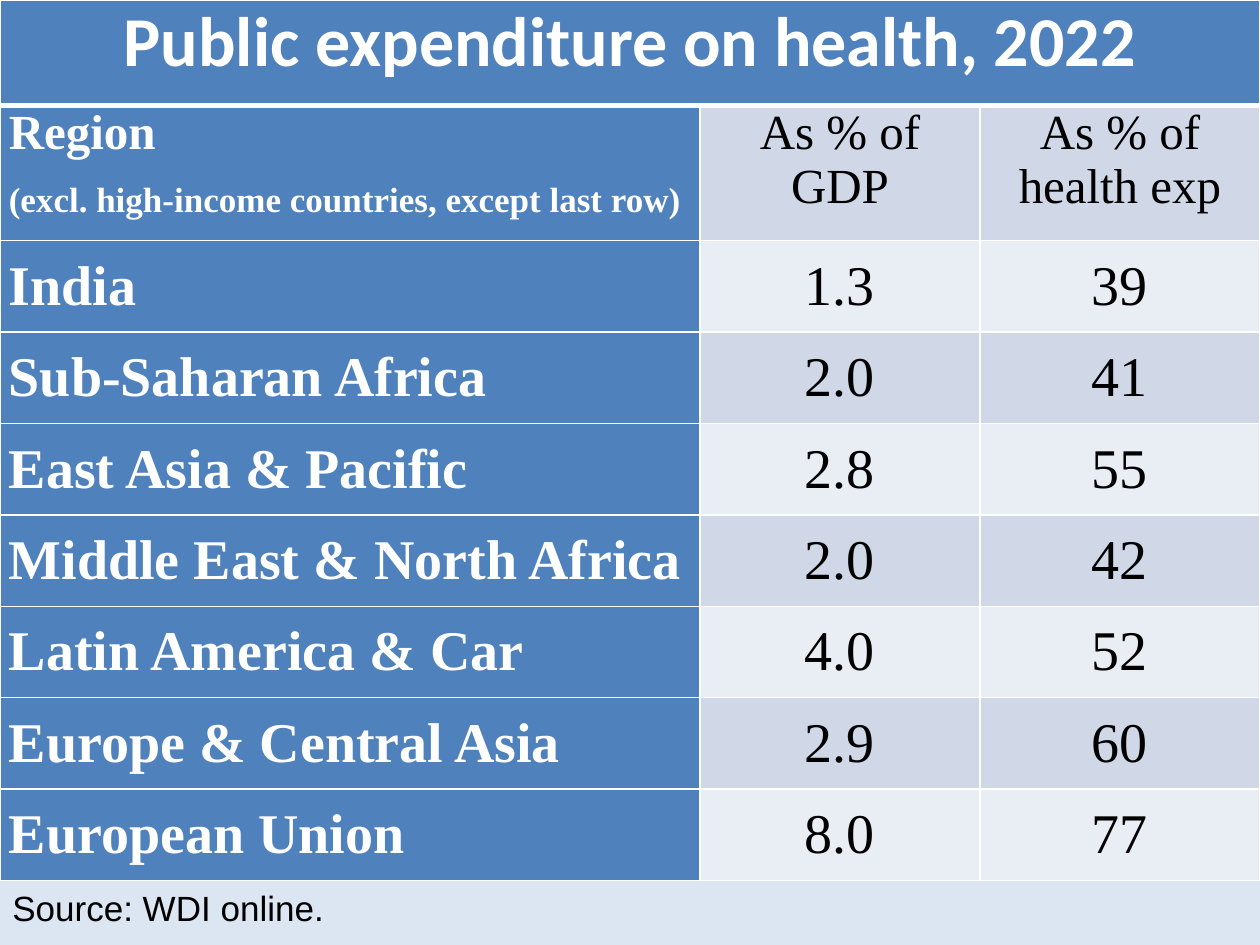
from lxml import etree
from pptx import Presentation
from pptx.dml.color import RGBColor
from pptx.enum.text import MSO_ANCHOR, PP_ALIGN
from pptx.oxml.ns import qn
from pptx.util import Inches, Pt

LEFT, CENTER = PP_ALIGN.LEFT, PP_ALIGN.CENTER
TOP, MIDDLE = MSO_ANCHOR.TOP, MSO_ANCHOR.MIDDLE

WIDTH, HEIGHT = 10, 7.5
TABLE_HEIGHT, TITLE_HEIGHT, HEADER_HEIGHT = 6.99, 0.84, 1.07
COLUMN_SHARES = (5 / 9, 2 / 9, 2 / 9)
SERIF = "Times New Roman"
BLUE, WHITE, BLACK = "4F81BD", "FFFFFF", "000000"
BACKGROUND = "DCE6F2"
BANDS = ("D0D8E8", "E9EDF4")

TITLE = "Public expenditure on health, 2022"
REGION_HEADING = (("Region", 28), ("(excl. high-income countries, except last row)", 20))
VALUE_HEADINGS = ("As % of GDP", "As % of health exp")
REGIONS = (
    ("India", "1.3", "39"),
    ("Sub-Saharan Africa", "2.0", "41"),
    ("East Asia & Pacific", "2.8", "55"),
    ("Middle East & North Africa", "2.0", "42"),
    ("Latin America & Car", "4.0", "52"),
    ("Europe & Central Asia", "2.9", "60"),
    ("European Union", "8.0", "77"),
)
SOURCE = "Source: WDI online."


def color(value):
    return RGBColor.from_string(value)


def paint(fill, value):
    fill.solid()
    fill.fore_color.rgb = color(value)


def write(frame, text, size=32, font=SERIF, ink=BLACK, bold=False, align=LEFT,
          before=0, after=6, append=False):
    paragraph = frame.add_paragraph() if append else frame.paragraphs[0]
    paragraph.alignment = align
    paragraph.space_before, paragraph.space_after = Pt(before), Pt(after)
    run = paragraph.add_run()
    run.text = text
    run.font.size, run.font.name, run.font.bold = Pt(size), font, bold
    run.font.color.rgb = color(ink)


def add_border(cell, side, points, position):
    line = etree.Element(qn(f"a:ln{side}"), w=str(Pt(points)))
    fill = etree.SubElement(line, qn("a:solidFill"))
    etree.SubElement(fill, qn("a:srgbClr"), val=WHITE)
    cell._tc.get_or_add_tcPr().insert(position, line)


def format_cell(cell, row, column):
    cell.margin_left = cell.margin_right = Inches(0.07)
    cell.margin_top = cell.margin_bottom = 0
    cell.vertical_anchor = MIDDLE if row > 1 else TOP
    paint(cell.fill, BLUE if row == 0 or column == 0 else BANDS[(row - 1) % 2])
    widths = {"L": 1, "R": 1, "T": 3 if row == 1 else 1, "B": 3 if row == 0 else 1}
    for position, (side, points) in enumerate(widths.items()):
        add_border(cell, side, points, position)


def add_expenditure_table(slide):
    row_count, column_count = len(REGIONS) + 2, len(COLUMN_SHARES)
    table = slide.shapes.add_table(
        row_count, column_count, 0, 0, Inches(WIDTH), Inches(TABLE_HEIGHT)).table
    for column, share in zip(table.columns, COLUMN_SHARES):
        column.width = Inches(WIDTH * share)
    region_height = (TABLE_HEIGHT - TITLE_HEIGHT - HEADER_HEIGHT) / len(REGIONS)
    heights = [TITLE_HEIGHT, HEADER_HEIGHT] + [region_height] * len(REGIONS)
    for row, height in enumerate(heights):
        table.rows[row].height = Inches(height)
        for column in range(column_count):
            format_cell(table.cell(row, column), row, column)

    title_cell = table.cell(0, 0)
    title_cell.merge(table.cell(0, column_count - 1))
    write(title_cell.text_frame, TITLE, size=40, font="Calibri", ink=WHITE,
          bold=True, align=CENTER)
    for index, (text, size) in enumerate(REGION_HEADING):
        write(table.cell(1, 0).text_frame, text, size=size, ink=WHITE, bold=True,
              before=6 if index else 0, append=index > 0)
    for column, text in enumerate(VALUE_HEADINGS, 1):
        write(table.cell(1, column).text_frame, text, size=28, align=CENTER)
    for row, (region, *values) in enumerate(REGIONS, 2):
        write(table.cell(row, 0).text_frame, region, ink=WHITE, bold=True)
        for column, value in enumerate(values, 1):
            write(table.cell(row, column).text_frame, value, align=CENTER)


def main():
    presentation = Presentation()
    presentation.slide_width, presentation.slide_height = Inches(WIDTH), Inches(HEIGHT)
    slide = presentation.slides.add_slide(presentation.slide_layouts[6])
    paint(slide.background.fill, BACKGROUND)
    add_expenditure_table(slide)
    source_box = slide.shapes.add_textbox(
        0, Inches(TABLE_HEIGHT), Inches(WIDTH), Inches(0.44))
    source_box.text_frame.word_wrap = True
    write(source_box.text_frame, SOURCE, size=20, font="Arial", after=0)
    presentation.save("out.pptx")


if __name__ == "__main__":
    main()
